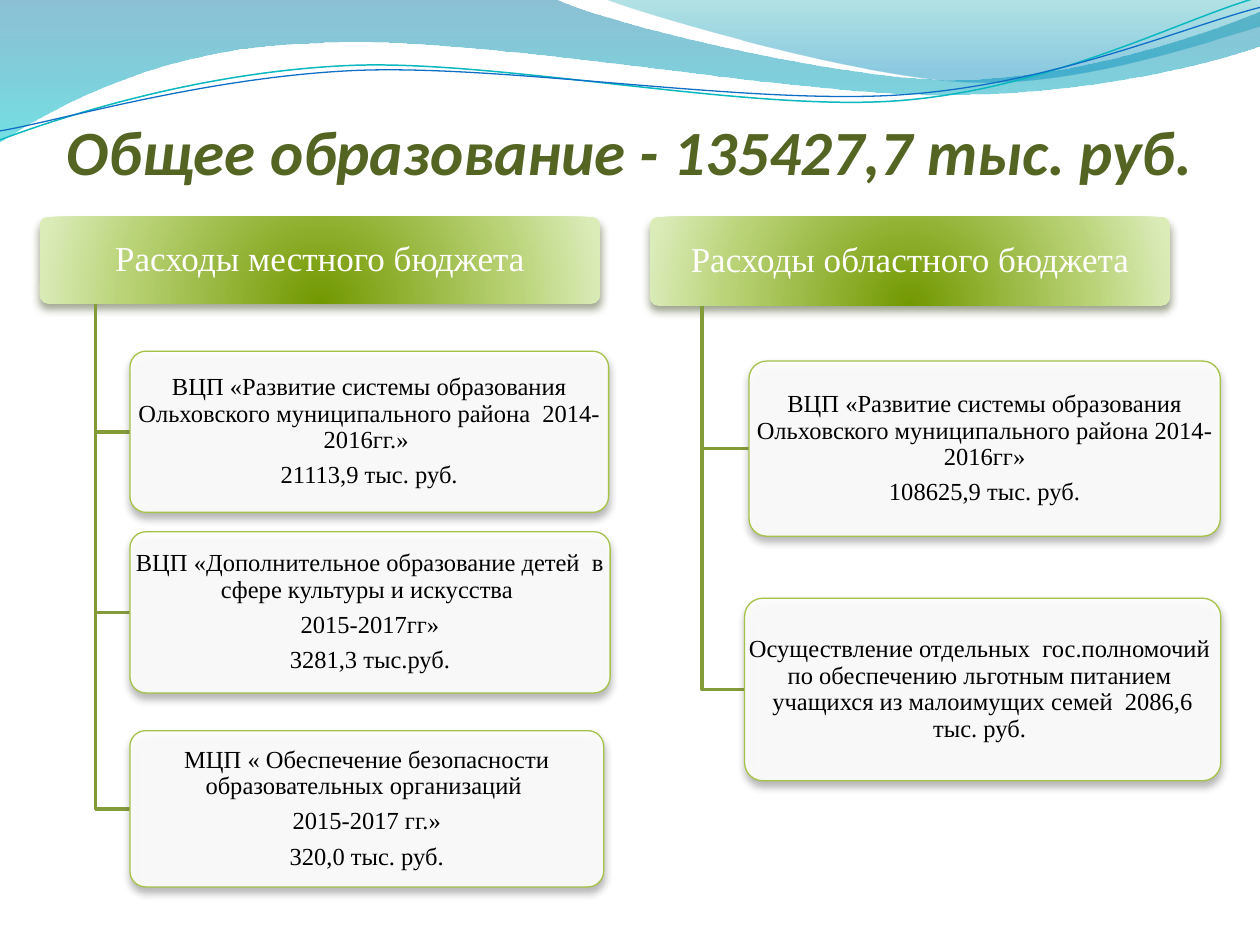
from dataclasses import dataclass
from math import cos, radians, sin
from typing import NamedTuple

from lxml import etree
from pptx import Presentation
from pptx.dml.color import RGBColor
from pptx.enum.shapes import MSO_SHAPE
from pptx.enum.text import MSO_ANCHOR, MSO_AUTO_SIZE, PP_ALIGN
from pptx.oxml import parse_xml
from pptx.oxml.ns import qn
from pptx.util import Cm, Pt

ROUNDED = MSO_SHAPE.ROUNDED_RECTANGLE
MIDDLE, BOTTOM = MSO_ANCHOR.MIDDLE, MSO_ANCHOR.BOTTOM
NO_FIT = MSO_AUTO_SIZE.NONE
CENTER = PP_ALIGN.CENTER
NAMESPACE = 'xmlns:a="http://schemas.openxmlformats.org/drawingml/2006/main"'


class Stop(NamedTuple):
    position: int
    color: str
    alpha: int = 100


class Frame(NamedTuple):
    left: float
    top: float
    width: float
    height: float


@dataclass(frozen=True)
class Theme:
    title_font: str = "Calibri"
    body_font: str = "Times New Roman"
    title_size: int = 36
    header_size: int = 20
    item_size: int = 14
    title: str = "546422"
    header_text: str = "FFFFFF"
    item_text: str = "000000"
    item_fill: str = "FFFFFF"
    item_line: str = "A5C249"
    branch: str = "849B3A"
    header_shadow: str = "3A4519"
    item_shadow: str = "5A5A5A"
    header_stops: tuple = (Stop(0, "729800"), Stop(68, "B8D275"), Stop(100, "DBECB9"))
    wide_wave: tuple = (Stop(0, "0074A1", 45), Stop(100, "00C6CF", 55))
    right_wave: tuple = (Stop(0, "00A1A9", 30), Stop(80, "008BBF", 45))
    teal_line: str = "0AB8BF"
    blue_line: str = "0F6FC6"


THEME = Theme()
DOWNWARD = '<a:lin ang="5400000" scaled="0"/>'
FROM_BOTTOM = ('<a:path path="circle">'
               '<a:fillToRect l="50000" t="130000" r="50000" b="-30000"/></a:path>')


@dataclass(frozen=True)
class Wave:
    start: tuple
    steps: tuple
    stops: tuple = ()
    line: str = ""
    width: float = 0
    tilt: float = 0
    center: tuple = (0, 0)


@dataclass(frozen=True)
class Item:
    frame: Frame
    lines: tuple


@dataclass(frozen=True)
class Branch:
    frame: Frame
    heading: str
    items: tuple


WAVES = (
    Wave((0, 0), (
        ((11.18, -0.03),),
        ((12.09, 0.43), (16.87, 1.6), (19.25, 1.6)),
        ((21.67, 1.6), (24.33, 0.66), (25.4, 0.23)),
        ((25.43, 0.91),),
        ((24.97, 1.12), (22.1, 1.93), (18.95, 1.91)),
        ((15.8, 1.91), (9.7, 0.71), (6.53, 0.86)),
        ((3.28, 0.91), (1.17, 2.11), (-0.03, 2.87)),
        ((0, 0),),
    ), stops=THEME.wide_wave),
    Wave((12.17, -0.03), (
        ((12.93, 0.28), (17.32, 1.57), (19.53, 1.65)),
        ((21.74, 1.75), (24.41, 0.81), (25.4, 0.53)),
        ((25.4, 0),),
        ((12.17, -0.03),),
    ), stops=THEME.right_wave),
    Wave((0, 2.82), (
        ((1.22, 2.36), (4.01, 1.45), (7.04, 1.32)),
        ((10.03, 1.19), (15.06, 2.26), (18.11, 2.03)),
        ((21.16, 1.8), (23.83, 0.38), (25.35, -0.05)),
    ), line=THEME.teal_line, width=0.85, tilt=-2.7, center=(12.67, 1.46)),
    Wave((0, 2.64), (
        ((1.19, 2.44), (4.17, 1.55), (7.19, 1.42)),
        ((10.24, 1.3), (15.16, 2.13), (18.21, 1.91)),
        ((21.23, 1.7), (23.9, 0.53), (25.4, 0.15)),
    ), line=THEME.blue_line, width=0.75, tilt=-2.7, center=(12.69, 1.5)),
)

BRANCHES = (
    Branch(Frame(0.8, 4.37, 11.3, 1.75), "Расходы местного бюджета", (
        Item(Frame(2.62, 7.08, 9.65, 3.25), (
            "ВЦП «Развитие системы образования Ольховского муниципального района  2014-2016гг.» ",
            "21113,9 тыс. руб.")),
        Item(Frame(2.62, 10.72, 9.68, 3.25), (
            "ВЦП «Дополнительное образование детей  в сфере культуры и искусства ",
            "2015-2017гг»", "3281,3 тыс.руб.")),
        Item(Frame(2.62, 14.73, 9.55, 3.15), (
            "МЦП « Обеспечение безопасности образовательных организаций ",
            "2015-2017 гг.»", "320,0 тыс. руб.")),
    )),
    Branch(Frame(13.1, 4.37, 10.49, 1.79), "Расходы областного бюджета", (
        Item(Frame(15.1, 7.28, 9.5, 3.53), (
            "ВЦП «Развитие системы образования Ольховского муниципального района 2014-2016гг»",
            "108625,9 тыс. руб.")),
        Item(Frame(15.01, 12.06, 9.6, 3.68), (
            "Осуществление отдельных  гос.полномочий  по обеспечению льготным питанием  "
            "учащихся из малоимущих семей  2086,6 тыс. руб. ",)),
    )),
)


def color_xml(color: str, alpha: int) -> str:
    return f'<a:srgbClr val="{color}"><a:alpha val="{alpha * 1000}"/></a:srgbClr>'


def set_fill(shape, stops: tuple, direction: str = "") -> None:
    if direction:
        marks = "".join(f'<a:gs pos="{stop.position * 1000}">{color_xml(stop.color, stop.alpha)}</a:gs>'
                        for stop in stops)
        xml = f'<a:gradFill {NAMESPACE} rotWithShape="1"><a:gsLst>{marks}</a:gsLst>{direction}</a:gradFill>'
    else:
        xml = f'<a:solidFill {NAMESPACE}>{color_xml(stops[0].color, stops[0].alpha)}</a:solidFill>'
    shape.fill.solid()
    properties = shape._element.spPr
    properties.replace(properties.find(qn("a:solidFill")), parse_xml(xml))


def set_line(shape, color: str, width: float) -> None:
    if color:
        shape.line.color.rgb = RGBColor.from_string(color)
        shape.line.width = Pt(width)
    else:
        shape.line.fill.background()


def write_text(shape, lines: tuple, *, font: str, size: int, color: str, anchor=MIDDLE,
               bold: bool = False, italic: bool = False, spacing: float = 0.9,
               after: float = 0.35, side: float = 0.07, edge: float = 0.05) -> None:
    frame = shape.text_frame
    frame.word_wrap, frame.auto_size, frame.vertical_anchor = True, NO_FIT, anchor
    frame.margin_left = frame.margin_right = Cm(side)
    frame.margin_top = frame.margin_bottom = Cm(edge)
    for index, line in enumerate(lines):
        para = frame.add_paragraph() if index else frame.paragraphs[0]
        para.alignment, para.line_spacing = CENTER, spacing
        para.space_before, para.space_after = Pt(0), Pt(size * after)
        span = para.add_run()
        span.text = line
        span.font.name, span.font.size = font, Pt(size)
        span.font.bold, span.font.italic = bold, italic
        span.font.color.rgb = RGBColor.from_string(color)


def turn(point: tuple, center: tuple, degrees: float) -> tuple:
    angle = radians(degrees)
    x, y = point[0] - center[0], point[1] - center[1]
    return (center[0] + x * cos(angle) - y * sin(angle),
            center[1] + x * sin(angle) + y * cos(angle))


def draw_outline(page, points: list, *, close: bool = False, line: str = "", width: float = 0):
    (left, top), *rest = [(Cm(x), Cm(y)) for x, y in points]
    builder = page.shapes.build_freeform(left, top)
    builder.add_line_segments(rest, close=close)
    shape = builder.convert_to_shape()
    shape.shadow.inherit = False
    shape.fill.background()
    set_line(shape, line, width)
    return shape


def draw_wave(page, wave: Wave) -> None:
    points = [wave.start] + [point for step in wave.steps for point in step]
    shape = draw_outline(page, [turn(point, wave.center, -wave.tilt) for point in points],
                         close=bool(wave.stops), line=wave.line, width=wave.width)
    shape.rotation = wave.tilt
    segments = iter(list(shape._element.iter(qn("a:lnTo"))))
    for step in wave.steps:
        first, *others = [next(segments) for _ in step]
        if others:
            curve = etree.Element(qn("a:cubicBezTo"))
            first.addprevious(curve)
            for segment in (first, *others):
                curve.append(segment[0])
                segment.getparent().remove(segment)
    if wave.stops:
        set_fill(shape, wave.stops, DOWNWARD)


def draw_box(page, frame: Frame, lines: tuple, *, stops: tuple, shadow: str, size: int, color: str,
             direction: str = "", line: str = "") -> None:
    box = page.shapes.add_shape(ROUNDED, *map(Cm, frame))
    box.adjustments[0] = 0.1
    box.shadow.inherit = False
    set_fill(box, stops, direction)
    set_line(box, line, 0.75)
    box._element.spPr.find(qn("a:effectLst")).append(parse_xml(
        f'<a:outerShdw {NAMESPACE} blurRad="{Pt(4.5)}" dist="{Pt(3)}" dir="5400000" '
        f'rotWithShape="0">{color_xml(shadow, 48)}</a:outerShdw>'))
    write_text(page.shapes.add_textbox(*map(Cm, frame)), lines, font=THEME.body_font, size=size,
               color=color)


def draw_branch(page, branch: Branch) -> None:
    header = branch.frame
    draw_box(page, header, (branch.heading,), stops=THEME.header_stops, shadow=THEME.header_shadow,
             size=THEME.header_size, color=THEME.header_text, direction=FROM_BOTTOM)
    trunk, start = header.left + header.width / 10, header.top + header.height
    for item in branch.items:
        middle = item.frame.top + item.frame.height / 2
        draw_outline(page, [(trunk, start), (trunk, middle), (item.frame.left, middle)],
                     line=THEME.branch, width=2)
        draw_box(page, item.frame, item.lines, stops=(Stop(0, THEME.item_fill, 90),),
                 shadow=THEME.item_shadow, size=THEME.item_size, color=THEME.item_text,
                 line=THEME.item_line)


def main() -> None:
    deck = Presentation()
    deck.slide_width, deck.slide_height = Cm(25.4), Cm(19.05)
    page = deck.slides.add_slide(deck.slide_layouts[5])
    for wave in WAVES:
        draw_wave(page, wave)
    title = page.shapes.title
    title.left, title.top, title.width, title.height = map(Cm, Frame(1.27, 0.41, 22.86, 3.38))
    write_text(title, ("Общее образование - 135427,7 тыс. руб.",), font=THEME.title_font,
               size=THEME.title_size, color=THEME.title, anchor=BOTTOM, bold=True, italic=True,
               spacing=1, after=0, side=0, edge=0)
    page.shapes._spTree.append(title._element)
    for branch in BRANCHES:
        draw_branch(page, branch)
    deck.save("out.pptx")


if __name__ == "__main__":
    main()
